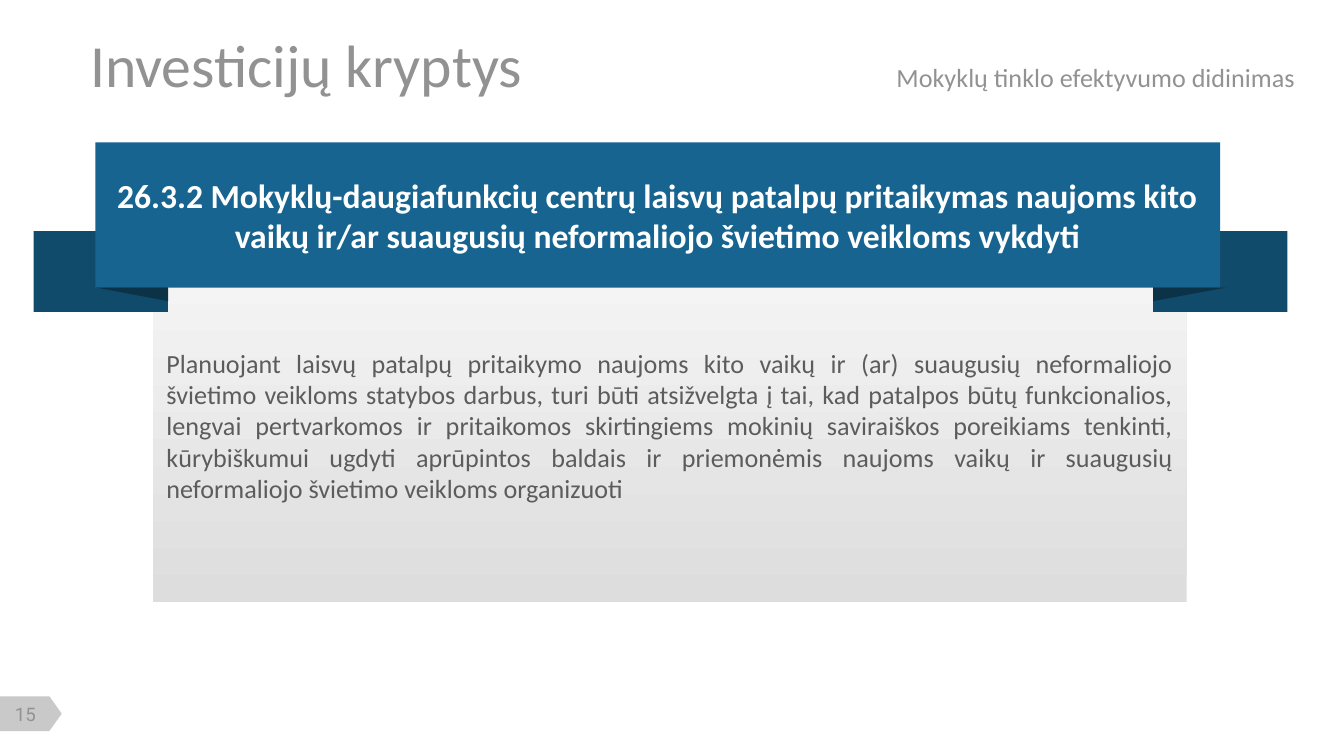
from collections import namedtuple

from lxml import etree
from pptx import Presentation
from pptx.dml.color import RGBColor
from pptx.enum.shapes import MSO_SHAPE
from pptx.enum.text import MSO_ANCHOR, MSO_AUTO_SIZE, PP_ALIGN
from pptx.oxml.ns import qn
from pptx.util import Inches, Pt

RECTANGLE = MSO_SHAPE.RECTANGLE
PAGE_TAG = MSO_SHAPE.FLOWCHART_OFFPAGE_CONNECTOR
LEFT, CENTER, JUSTIFY = PP_ALIGN.LEFT, PP_ALIGN.CENTER, PP_ALIGN.JUSTIFY
TOP, MIDDLE = MSO_ANCHOR.TOP, MSO_ANCHOR.MIDDLE
NO_AUTOFIT = MSO_AUTO_SIZE.NONE
TITLE_ONLY = 5

COLORS = {
    "heading": "929292", "body": "5C5C5C", "white": "FFFFFF", "tag": "C9C9C9",
    "ribbon": "176490", "tail": "114B6C", "fold": "0C3248",
    "panel_bottom": "DDDDDD", "panel_top": "F4F4F4",
}
Box = namedtuple("Box", "left top width height")
PAGE = Box(0, 0, 10, 10 * 9 / 16)


def share(box, left, top, width, height):
    """Return the part of a box given by percentages of its size."""
    return Box(box.left + left * box.width / 100, box.top + top * box.height / 100,
               width * box.width / 100, height * box.height / 100)


def color(name):
    return RGBColor.from_string(COLORS[name])


def write(para, text, size, ink, font="Calibri", bold=False):
    span = para.add_run()
    span.text = text
    span.font.size, span.font.name, span.font.bold = Pt(size), font, bold
    span.font.color.rgb = color(ink)


def set_frame(frame, align, anchor, insets=(0.1, 0.05, 0.1, 0.05)):
    """Format a text frame and return its first paragraph."""
    frame.word_wrap, frame.auto_size = True, NO_AUTOFIT
    frame.vertical_anchor = anchor
    (frame.margin_left, frame.margin_top,
     frame.margin_right, frame.margin_bottom) = map(Inches, insets)
    para = frame.paragraphs[0]
    para.alignment = align
    return para


def paint(shape, fill):
    shape.shadow.inherit = False
    shape.line.fill.background()
    shape.fill.solid()
    shape.fill.fore_color.rgb = color(fill)
    return shape


def add_block(shapes, box, fill, kind=RECTANGLE):
    return paint(shapes.add_shape(kind, *map(Inches, box)), fill)


def add_heading(page, box, title, topic):
    holder = page.shapes.title
    holder.left, holder.top, holder.width, holder.height = map(Inches, box)
    para = set_frame(holder.text_frame, LEFT, MIDDLE, (0, 0.05, 0.1, 0.05))
    # Tab stop where the topic starts
    tabs = etree.SubElement(para._p.get_or_add_pPr(), qn("a:tabLst"))
    etree.SubElement(tabs, qn("a:tab"), pos=str(Inches(6)), algn="l")
    write(para, title + "\t", 32, "heading")
    write(para, topic, 14, "heading")


def add_panel(page, box, text):
    panel = add_block(page.shapes, box, "panel_bottom")
    panel.fill.gradient()
    panel.fill.gradient_angle = 90
    for stop, name in zip(panel.fill.gradient_stops, ("panel_bottom", "panel_top")):
        stop.color.rgb = color(name)
    para = set_frame(panel.text_frame, JUSTIFY, TOP, (0.1, 0.52, 0.1, 0.05))
    write(para, text, 14, "body")


def add_ribbon(page, box, text):
    shapes = page.shapes.add_group_shape().shapes
    tail, front_height = 10.72, 85.7
    # Tails behind the front
    for left in (0, 100 - tail):
        add_block(shapes, share(box, left, 52.4, tail, 47.6), "tail")
    # Front with its text
    front = add_block(shapes, share(box, 4.93, 0, 89.7, front_height), "ribbon")
    write(set_frame(front.text_frame, CENTER, MIDDLE), text, 18, "white", bold=True)
    # Folds under the front
    for outer, inner in ((5, tail), (95.1, 100 - tail)):
        corners = [share(box, x, y, 0, 0)[:2] for x, y in
                   ((outer, front_height), (inner, front_height), (inner, 93.7))]
        start, *others = [tuple(map(Inches, corner)) for corner in corners]
        builder = shapes.build_freeform(*start)
        builder.add_line_segments(others, close=True)
        paint(builder.convert_to_shape(), "fold")


def add_page_number(page, box, number):
    # The tag is drawn upright and turned to point right
    upright = Box(box.left + (box.width - box.height) / 2,
                  box.top + (box.height - box.width) / 2, box.height, box.width)
    add_block(page.shapes, upright, "tag", PAGE_TAG).rotation = 270
    label = page.shapes.add_textbox(*map(Inches, share(box, 5, 20, 72, 64)))
    para = set_frame(label.text_frame, CENTER, MIDDLE, (0, 0, 0, 0))
    write(para, number, 10, "heading", font="Roboto")


def main():
    deck = Presentation()
    deck.slide_width, deck.slide_height = Inches(PAGE.width), Inches(PAGE.height)
    page = deck.slides.add_slide(deck.slide_layouts[TITLE_ONLY])

    add_page_number(page, share(PAGE, 0, 92.1, 4.6, 4.6), "15")
    add_panel(
        page, share(PAGE, 11.4, 36.65, 76.9, 43),
        "Planuojant laisvų patalpų pritaikymo naujoms kito vaikų ir (ar) suaugusių "
        "neformaliojo švietimo veikloms statybos darbus, turi būti atsižvelgta į tai, "
        "kad patalpos būtų funkcionalios, lengvai pertvarkomos ir pritaikomos "
        "skirtingiems mokinių saviraiškos poreikiams tenkinti, kūrybiškumui ugdyti "
        "aprūpintos baldais ir priemonėmis naujoms vaikų ir suaugusių neformaliojo "
        "švietimo veikloms organizuoti")
    add_heading(page, share(PAGE, 6.7, 4.95, 91.5, 6.9),
                "Investicijų kryptys", "Mokyklų tinklo efektyvumo didinimas")
    add_ribbon(
        page, share(PAGE, 2.5, 18.85, 93.3, 22.4),
        "26.3.2 Mokyklų-daugiafunkcių centrų laisvų patalpų pritaikymas naujoms kito "
        "vaikų ir/ar suaugusių neformaliojo švietimo veikloms vykdyti")
    deck.save("out.pptx")


if __name__ == "__main__":
    main()
